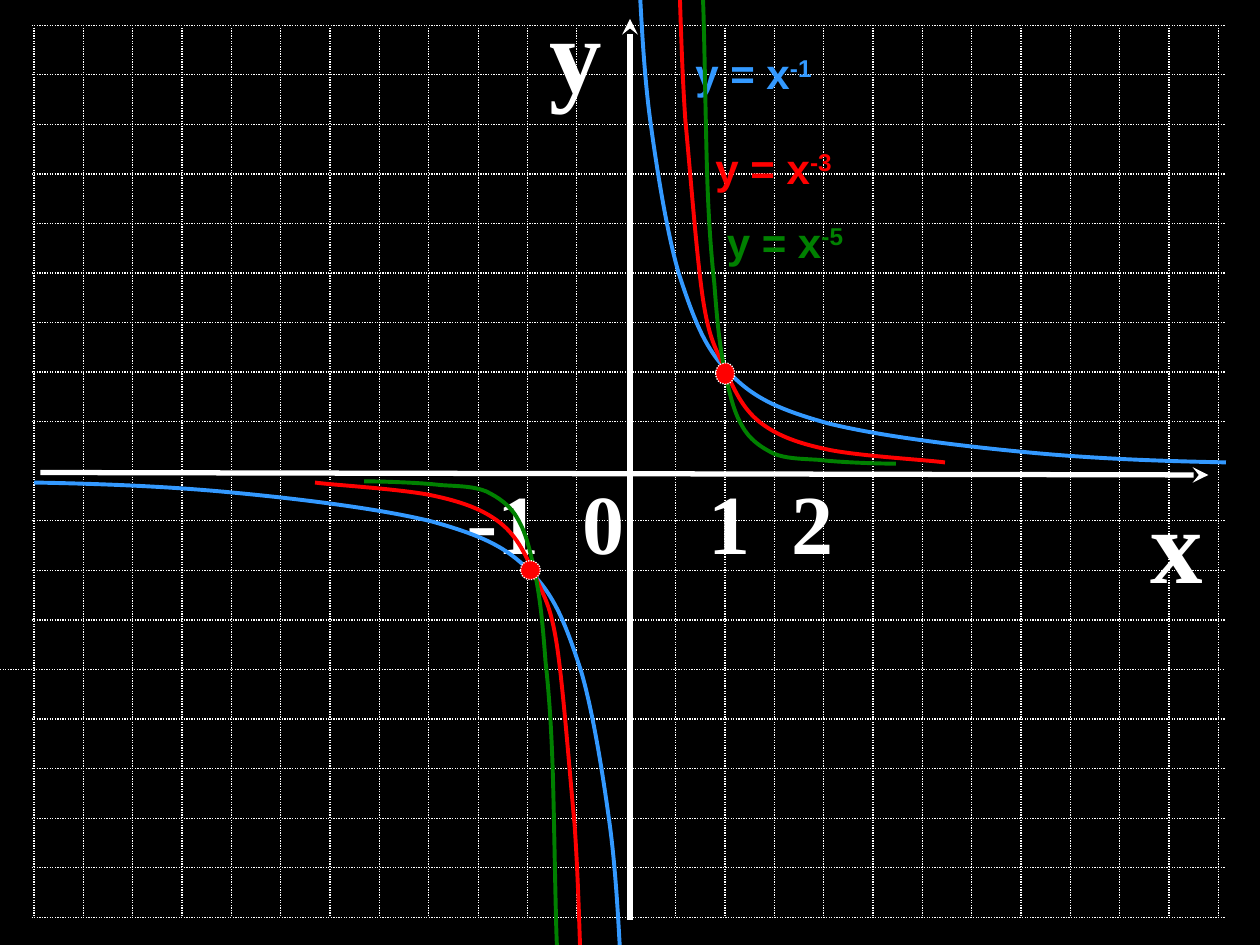
from lxml import etree
from pptx import Presentation, util as u
from pptx.dml.color import RGBColor
from pptx.enum import dml, shapes, text
from pptx.oxml.ns import qn

WHITE = RGBColor(255, 255, 255)
BLACK = RGBColor(0, 0, 0)
BLUE = RGBColor(0x33, 0x99, 0xFF)
RED = RGBColor(255, 0, 0)
GREEN = RGBColor(0, 0x80, 0)
SERIF, SANS = "Times New Roman", "Arial"

# Grid: first line, step, number of lines, line of the axis, extent of the lines
COLS = (0.27, 9.4 / 24, 25, 12, 0.22, 7.27)
ROWS = (0.2, 7.08 / 18, 19, 9, 0.25, 9.72)
LONG = 13  # this row starts at the slide's edge
AXES = [(0.32, 3.75, 9.59, 3.77), (5, 7.3, 5, 0.15)]
NAMES = [("y", 4.26, -0.15, 0.59), ("x", 8.89, 3.75, 0.89)]
TICKS = [("-", 54, False), ("1\t0\t1\t2", 48, True)]
TABS = [0.92, 1.92, 2.58]
DOTS = [(4.13, 4.45, 0.16, 0.15), (5.68, 2.88, 0.15, 0.17)]

# Right branches: power, colour, label place, Bezier points (start, then threes)
CURVES = [
    ("-1", BLUE, (5.42, 0.33), [
        (5.08, -0.03), (5.09, 0.13), (5.11, 0.58), (5.16, 0.95),
        (5.21, 1.32), (5.29, 1.84), (5.39, 2.18),
        (5.5, 2.51), (5.59, 2.77), (5.79, 2.96),
        (5.98, 3.16), (6.18, 3.25), (6.57, 3.36),
        (6.97, 3.46), (7.62, 3.54), (8.15, 3.59),
        (8.67, 3.64), (9.2, 3.66), (9.73, 3.67)]),
    ("-3", RED, (5.58, 1.08), [
        (7.5, 3.67), (7.35, 3.65), (6.83, 3.62), (6.58, 3.57),
        (6.34, 3.52), (6.17, 3.46), (6.03, 3.35),
        (5.89, 3.24), (5.82, 3.08), (5.75, 2.92),
        (5.68, 2.76), (5.63, 2.7), (5.58, 2.38),
        (5.53, 2.05), (5.48, 1.38), (5.44, 0.96),
        (5.41, 0.53), (5.4, 0.06), (5.39, -0.18)]),
    ("-5", GREEN, (5.67, 1.67), [
        (5.58, 0), (5.59, 0.22), (5.6, 0.92), (5.61, 1.29),
        (5.62, 1.67), (5.64, 1.98), (5.67, 2.25),
        (5.69, 2.52), (5.71, 2.74), (5.75, 2.93),
        (5.79, 3.12), (5.82, 3.26), (5.89, 3.38),
        (5.95, 3.49), (6.04, 3.55), (6.14, 3.6),
        (6.24, 3.64), (6.34, 3.64), (6.5, 3.65),
        (6.66, 3.67), (6.98, 3.68), (7.11, 3.68)]),
]

deck = Presentation()
deck.slide_width, deck.slide_height = u.Inches(10), u.Inches(7.5)
slide = deck.slides.add_slide(deck.slide_layouts[6])
slide.background.fill.solid()
slide.background.fill.fore_color.rgb = BLACK


def ink(line, color, width, dots=False):
    line.color.rgb, line.width = color, u.Pt(width)
    if dots:
        line.dash_style = dml.MSO_LINE.ROUND_DOT


def rule(ends, width, axis=False):
    con = slide.shapes.add_connector(shapes.MSO_CONNECTOR.STRAIGHT,
                                     *map(u.Inches, ends))
    ink(con.line, WHITE, width, dots=not axis)
    if axis:
        etree.SubElement(con.line._get_or_add_ln(), qn("a:tailEnd"),
                         type="stealth")
    etree.SubElement(con._element.spPr, qn("a:effectLst"))


def label(place, runs, face, color, wrap=True):
    frame = slide.shapes.add_textbox(*map(u.Inches, place)).text_frame
    frame.word_wrap = wrap
    para = frame.paragraphs[0]
    for words, size, bold in runs:
        run = para.add_run()
        run.text = words
        font = run.font
        font.name, font.size, font.bold = face, u.Pt(size), bold
        font.color.rgb = color
    return frame, para


def curve(pts, color):
    (x, y), *rest = [(a * 1000, b * 1000) for a, b in pts]
    form = slide.shapes.build_freeform(x, y, scale=u.Inches(1) / 1000)
    form.add_line_segments(rest, close=False)
    shape = form.convert_to_shape()
    shape.fill.background()
    shape.shadow.inherit = False
    ink(shape.line, color, 2.25)
    # Join every three segments into one Bezier segment
    segs = list(shape._element.iter(qn("a:lnTo")))
    for a, b, c in zip(segs[::3], segs[1::3], segs[2::3]):
        a.tag = qn("a:cubicBezTo")
        for seg in (b, c):
            a.append(seg[0])
            seg.getparent().remove(seg)


# Axes and their names
for ends in AXES:
    rule(ends, 3, axis=True)
for name, x, y, w in NAMES:
    _, para = label((x, y, w, 1.1), [(name, 60, True)], SERIF, WHITE, False)
    para.alignment = text.PP_ALIGN.CENTER

# Dotted grid, left open where the axes run
start, step, count, mid, near, far = ROWS
for i in range(count):
    if i != mid:
        y = start + i * step
        rule((0 if i == LONG else near, y, far, y), 0.75)
start, step, count, mid, near, far = COLS
for i in range(count):
    if i != mid:
        x = start + i * step
        rule((x, near, x, far), 0.75)

# Numbers on the x axis, set on tab stops
frame, para = label((3.04, 3.6, 3.92, 1), TICKS, SERIF, WHITE)
frame.margin_left = u.Inches(0.66)
props = para._p.get_or_add_pPr()
gap = etree.SubElement(props, qn("a:spcBef"))
etree.SubElement(gap, qn("a:spcPct"), val="50000")
stops = etree.SubElement(props, qn("a:tabLst"))
for tab in TABS:
    etree.SubElement(stops, qn("a:tab"), pos=str(u.Inches(tab)), algn="l")

# Curves: the left branch mirrors the right one through the origin (5, 3.75)
for power, color, (x, y), pts in CURVES:
    curve(pts, color)
    curve([(10 - a, 7.5 - b) for a, b in pts], color)
    _, para = label((x, y, 1.25, 0.5),
                    [("у = х", 24, True), (power, 24, True)], SANS, color)
    para.runs[1]._r.get_or_add_rPr().set("baseline", "30000")

# Common points
for place in DOTS:
    dot = slide.shapes.add_shape(shapes.MSO_SHAPE.OVAL, *map(u.Inches, place))
    dot.shadow.inherit = False
    dot.fill.solid()
    dot.fill.fore_color.rgb = RED
    ink(dot.line, WHITE, 0.75, dots=True)

deck.save("out.pptx")
